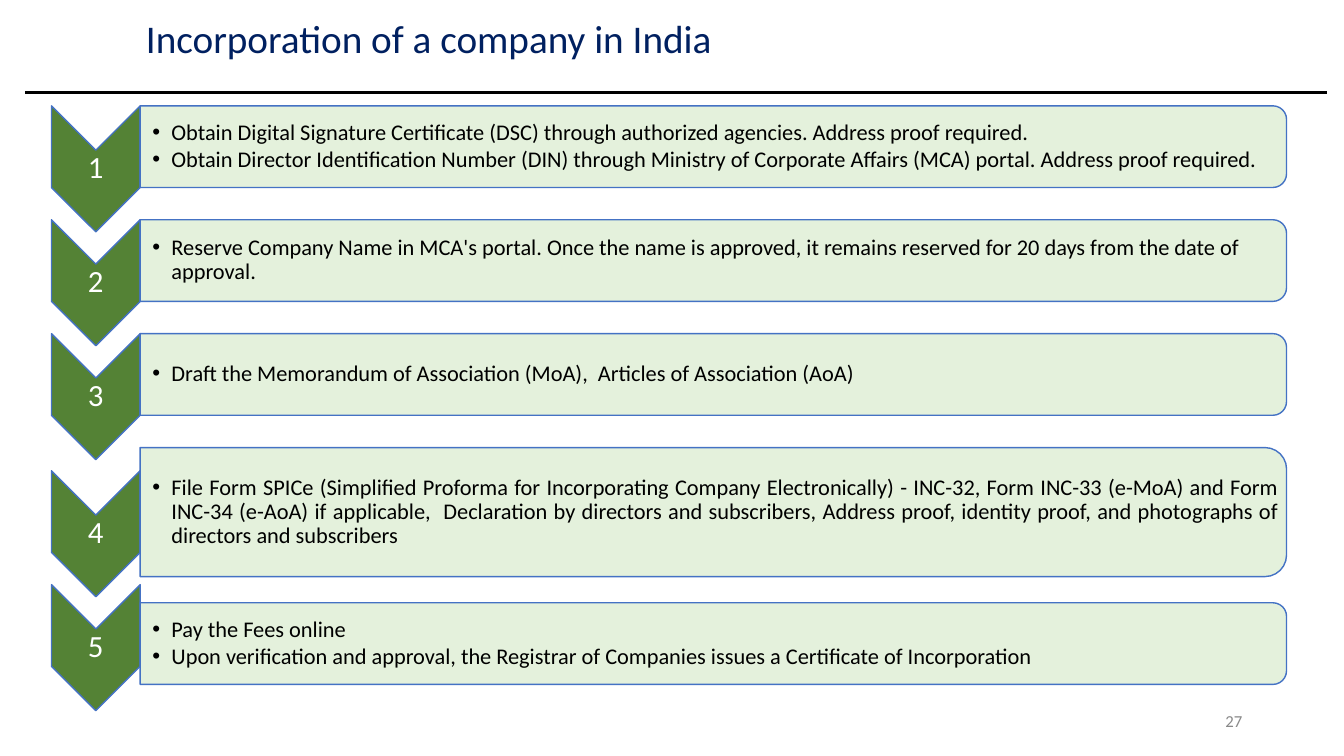
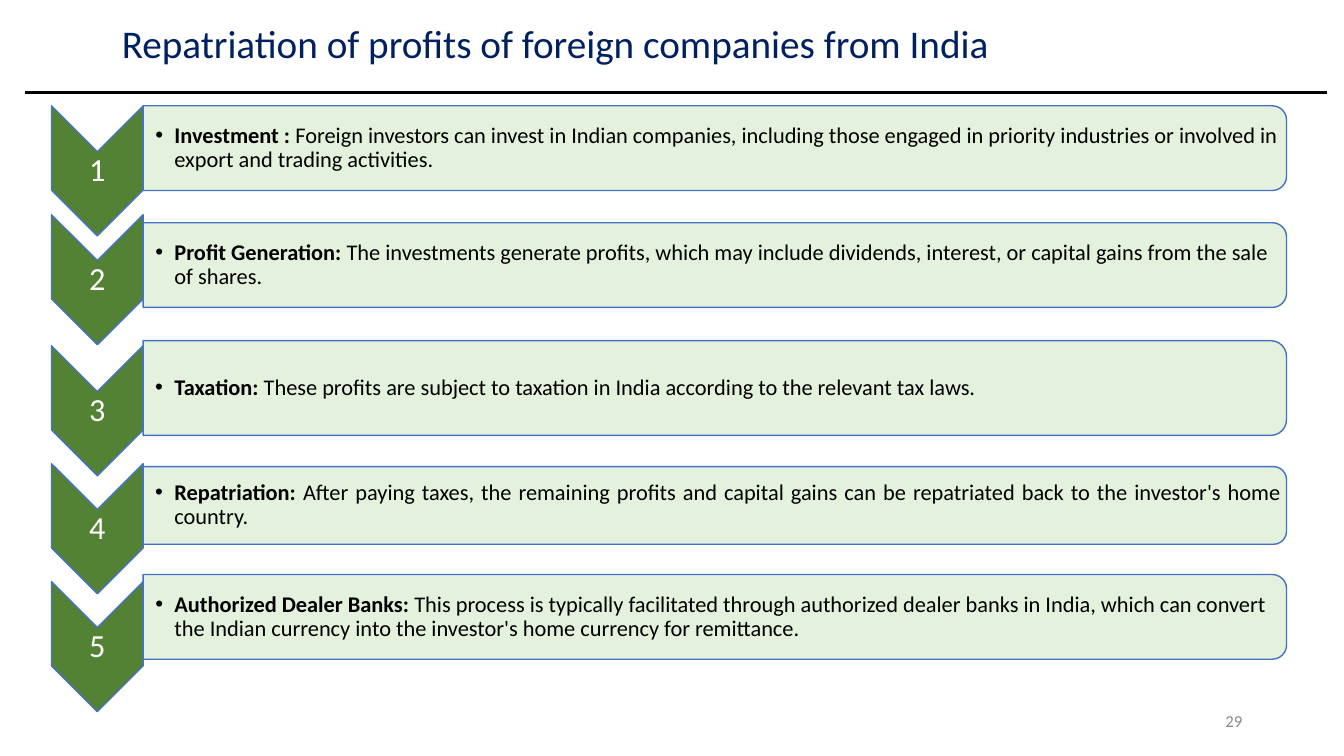
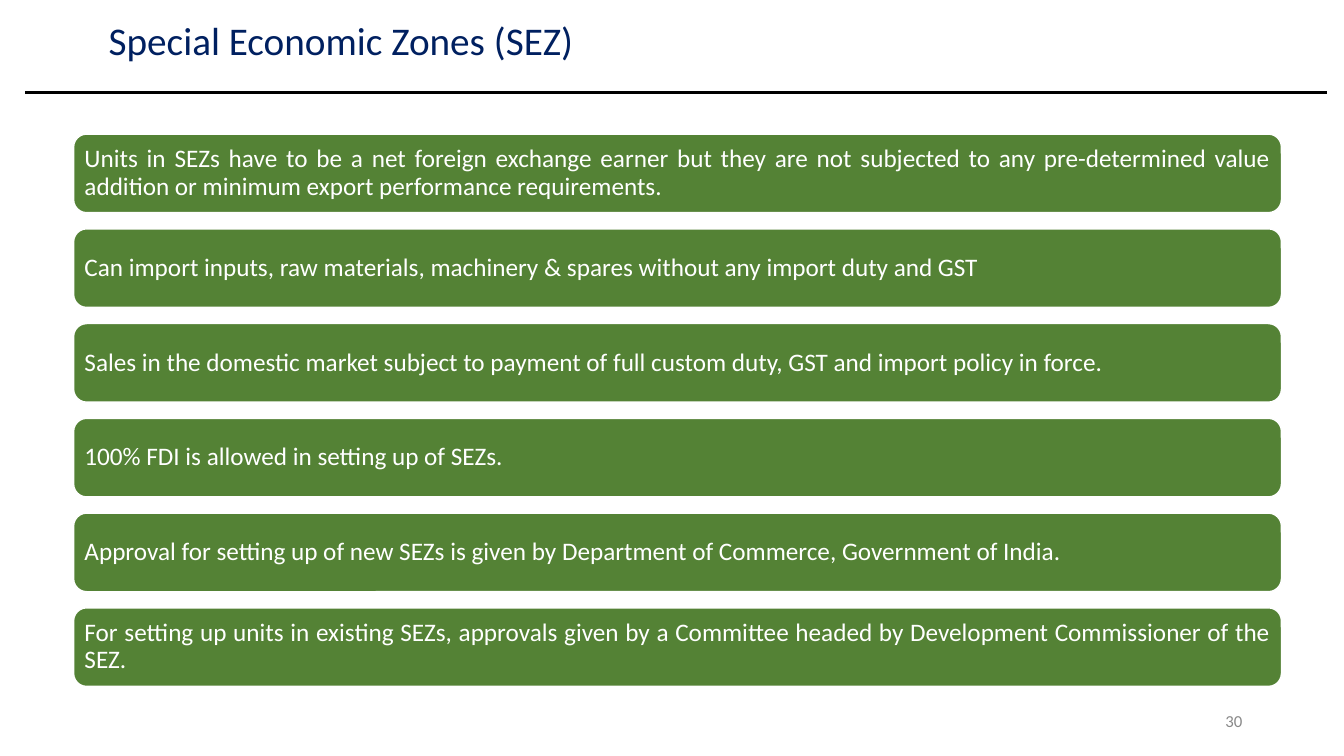
from collections import namedtuple

from lxml.etree import SubElement
from pptx import Presentation
from pptx.dml.color import RGBColor
from pptx.enum.shapes import MSO_CONNECTOR, MSO_SHAPE
from pptx.enum.text import MSO_ANCHOR, PP_ALIGN
from pptx.oxml.ns import qn
from pptx.util import Inches, Pt

WIDTH, HEIGHT = 13.33, 7.5
FONT = "Calibri"
NAVY, GREEN, MINT, BLUE = "002060", "548235", "E2F0D9", "4472C4"
BLACK, WHITE, GREY = "000000", "FFFFFF", "898989"
LEFT, RIGHT, JUSTIFY, CENTER = (
    PP_ALIGN.LEFT, PP_ALIGN.RIGHT, PP_ALIGN.JUSTIFY, PP_ALIGN.CENTER)

Box = namedtuple("Box", "left top width height")
# A step has its chevron top, panel top, panel height, alignment and points;
# each point is a bold lead and a plain text.
Step = namedtuple("Step", "chevron_top panel_top panel_height align points")

INCORPORATION = [
    Step(1.05, 1.05, 0.81, LEFT, [
        ("", "Obtain Digital Signature Certificate (DSC) through authorized "
             "agencies. Address proof required."),
        ("", "Obtain Director Identification Number (DIN) through Ministry of "
             "Corporate Affairs (MCA) portal. Address proof required.")]),
    Step(2.18, 2.18, 0.81, LEFT, [
        ("", "Reserve Company Name in MCA's portal. Once the name is approved, "
             "it remains reserved for 20 days from the date of approval.")]),
    Step(3.31, 3.31, 0.81, LEFT, [
        ("", "Draft the Memorandum of Association (MoA),  Articles of "
             "Association (AoA)")]),
    Step(4.67, 4.44, 1.28, JUSTIFY, [
        ("", "File Form SPICe (Simplified Proforma for Incorporating Company "
             "Electronically) - INC-32, Form INC-33 (e-MoA) and Form INC-34 "
             "(e-AoA) if applicable,  Declaration by directors and "
             "subscribers, Address proof, identity proof, and photographs of "
             "directors and subscribers")]),
    Step(5.8, 5.98, 0.81, LEFT, [
        ("", "Pay the Fees online"),
        ("", "Upon verification and approval, the Registrar of Companies "
             "issues a Certificate of Incorporation")]),
]

REPATRIATION = [
    Step(1.05, 1.05, 0.84, LEFT, [
        ("Investment : ", "Foreign investors can invest in Indian companies, "
         "including those engaged in priority industries or involved in "
         "export and trading activities.")]),
    Step(2.13, 2.21, 0.84, LEFT, [
        ("Profit Generation: ", "The investments generate profits, which may "
         "include dividends, interest, or capital gains from the sale of "
         "shares.")]),
    Step(3.43, 3.38, 0.94, LEFT, [
        ("Taxation: ", "These profits are subject to taxation in India "
         "according to the relevant tax laws.")]),
    Step(4.6, 4.63, 0.77, JUSTIFY, [
        ("Repatriation: ", "After paying taxes, the remaining profits and "
         "capital gains can be repatriated back to the investor's home "
         "country.")]),
    Step(5.77, 5.7, 0.84, LEFT, [
        ("Authorized Dealer Banks: ", "This process is typically facilitated "
         "through authorized dealer banks in India, which can convert the "
         "Indian currency into the investor's home currency for "
         "remittance.")]),
]

SEZ_RULES = [
    (JUSTIFY, "Units in SEZs have to be a net foreign exchange earner but they "
     "are not subjected to any pre-determined value addition or minimum "
     "export performance requirements."),
    (LEFT, "Can import inputs, raw materials, machinery & spares without any "
     "import duty and GST"),
    (LEFT, "Sales in the domestic market subject to payment of full custom "
     "duty, GST and import policy in force."),
    (LEFT, "100% FDI is allowed in setting up of SEZs."),
    (LEFT, "Approval for setting up of new SEZs is given by Department of "
     "Commerce, Government of India."),
    (JUSTIFY, "For setting up units in existing SEZs, approvals given by a "
     "Committee headed by Development Commissioner of the SEZ."),
]


def color(hex_text):
    return RGBColor.from_string(hex_text)


def inches(box):
    return [Inches(length) for length in box]


def add_bullet(paragraph, indent=0.19):
    props = paragraph._p.get_or_add_pPr()
    props.set("marL", str(Inches(indent)))
    props.set("indent", str(-Inches(indent)))
    SubElement(props, qn("a:buFont"), typeface="Arial")
    SubElement(props, qn("a:buChar"), char="•")


def write(shape, points, size=16, ink=BLACK, align=LEFT, bullets=False,
          insets=(0.1, 0.05, 0.1, 0.05), spacing=0.9):
    """Fill a shape or text box with (bold lead, plain text) points."""
    frame = shape.text_frame
    frame.word_wrap = True
    frame.vertical_anchor = MSO_ANCHOR.MIDDLE
    (frame.margin_left, frame.margin_top,
     frame.margin_right, frame.margin_bottom) = inches(insets)
    for index, (lead, text) in enumerate(points):
        paragraph = frame.add_paragraph() if index else frame.paragraphs[0]
        if bullets:
            add_bullet(paragraph)
        paragraph.alignment = align
        paragraph.line_spacing = spacing
        if index:
            paragraph.space_before = Pt(2)
        for words, bold in ((lead, True), (text, False)):
            if words:
                run = paragraph.add_run()
                run.text = words
                run.font.name, run.font.size = FONT, Pt(size)
                run.font.bold = bold
                run.font.color.rgb = color(ink)


def add_text(slide, box, points, **style):
    write(slide.shapes.add_textbox(*inches(box)), points, **style)


def add_block(slide, preset, box, fill, line, turned=False, opacity=100):
    """Draw a preset that covers box, turned a quarter clockwise if asked."""
    if turned:
        left, top, width, height = box
        shift = (width - height) / 2
        box = Box(left + shift, top - shift, height, width)
    block = slide.shapes.add_shape(preset, *inches(box))
    block.rotation = 90 if turned else 0
    block.shadow.inherit = False
    block.fill.solid()
    block.fill.fore_color.rgb = color(fill)
    block.line.color.rgb = color(line)
    block.line.width = Pt(1)
    if opacity < 100:
        tint = block._element.spPr.find(qn("a:solidFill"))[0]
        SubElement(tint, qn("a:alpha"), val=str(opacity * 1000))
    return block


def add_frame(deck, title, title_left, number):
    """Start a slide with its title, rule and page number."""
    slide = deck.slides.add_slide(deck.slide_layouts[6])
    left, top = title_left
    add_text(slide, Box(left, top, 9.47, 0.8), [("", title)],
             size=28, ink=NAVY)
    rule = slide.shapes.add_connector(
        MSO_CONNECTOR.STRAIGHT, *inches((0.25, 0.92, 13.16, 0.92)))
    rule.line.color.rgb = color(BLACK)
    rule.line.width = Pt(2.25)
    SubElement(rule._element.spPr, qn("a:effectLst"))
    add_text(slide, Box(9.42, 6.95, 3, 0.4), [("", number)],
             size=12, ink=GREY, align=RIGHT, spacing=1)
    return slide


def add_chevron(slide, box, label, size):
    add_block(slide, MSO_SHAPE.CHEVRON, box, GREEN, BLUE, turned=True)
    add_text(slide, box, [("", label)], size=size, ink=WHITE, align=CENTER,
             insets=(0.02,) * 4)


def add_panel(slide, box, points, align):
    add_block(slide, MSO_SHAPE.ROUND_2_SAME_RECTANGLE, box, MINT, BLUE,
              turned=True, opacity=90)
    corner = 0.05 * box.height  # keeps the text clear of the round corners
    text_box = Box(box.left, box.top + corner,
                   box.width - corner, box.height - 2 * corner)
    add_text(slide, text_box, points, align=align, bullets=True,
             insets=(0.12, 0.01, 0.01, 0.01))


def add_steps(slide, steps, area, chevron_width, chevron_height, label_size):
    """Place numbered chevrons with a panel to the right of each."""
    for number, step in enumerate(steps, 1):
        add_chevron(slide, Box(area.left, step.chevron_top,
                               chevron_width, chevron_height),
                    str(number), label_size)
        add_panel(slide, Box(area.left + chevron_width, step.panel_top,
                             area.width - chevron_width, step.panel_height),
                  step.points, step.align)


def add_bars(slide, rules, area, bar_height):
    """Spread full-width bars evenly over the area."""
    pitch = (area.height - bar_height) / (len(rules) - 1)
    for row, (align, text) in enumerate(rules):
        box = Box(area.left, area.top + row * pitch, area.width, bar_height)
        bar = add_block(slide, MSO_SHAPE.ROUNDED_RECTANGLE, box, GREEN, WHITE)
        write(bar, [("", text)], size=18, ink=WHITE, align=align,
              insets=(0.07,) * 4)


def main():
    deck = Presentation()
    deck.slide_width, deck.slide_height = Inches(WIDTH), Inches(HEIGHT)
    steps_area = Box(0.51, 1.05, 12.25, 6)

    slide = add_frame(deck, "Incorporation of a company in India",
                      (1.35, 0), "27")
    add_steps(slide, INCORPORATION, steps_area, 0.88, 1.25, 22)

    slide = add_frame(
        deck, "Repatriation of profits of foreign companies from India",
        (1.11, 0.05), "29")
    add_steps(slide, REPATRIATION, steps_area, 0.91, 1.29, 23)

    slide = add_frame(deck, "Special Economic Zones (SEZ)",
                      (0.98, 0.02), "30")
    add_bars(slide, SEZ_RULES, Box(0.73, 1.33, 11.98, 5.48), 0.78)

    deck.save("out.pptx")


if __name__ == "__main__":
    main()
